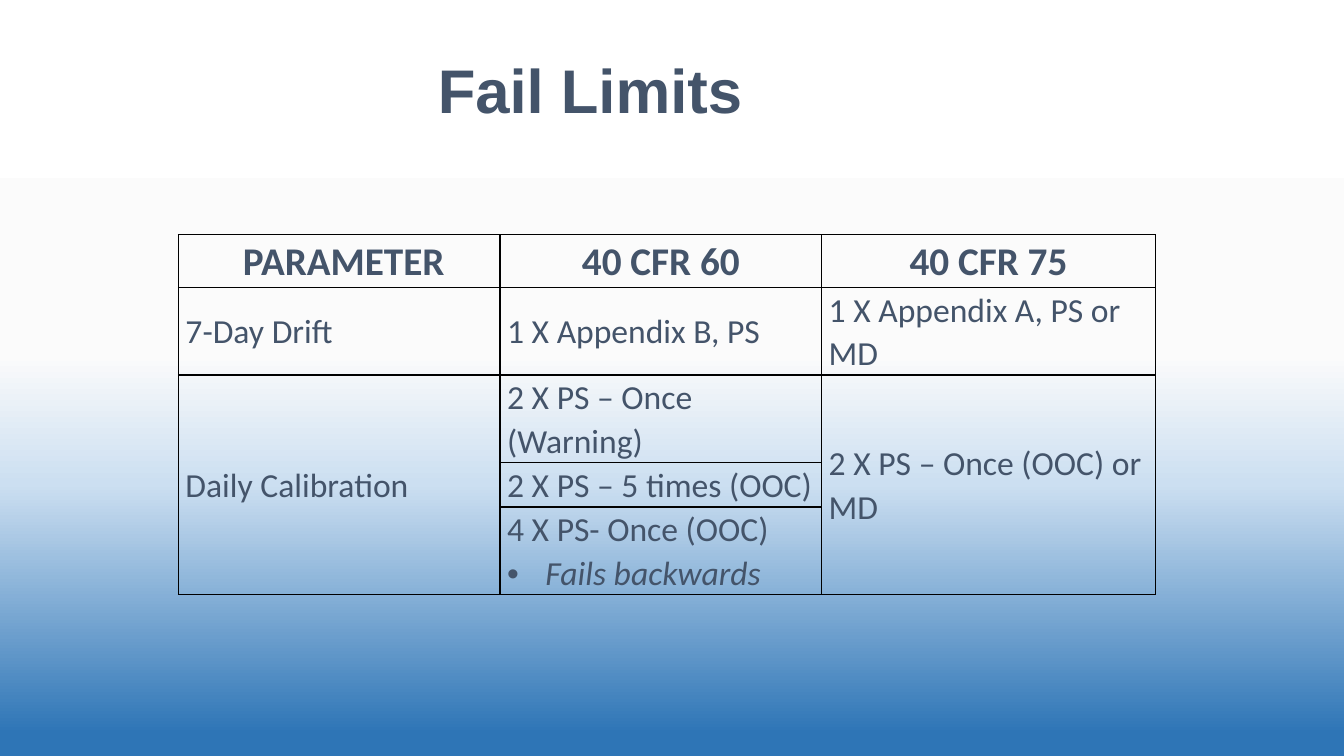
"""Builds the Fail Limits slide with its comparison table."""
from dataclasses import dataclass

from lxml.etree import SubElement
from pptx import Presentation
from pptx.dml.color import RGBColor
from pptx.enum.text import MSO_ANCHOR, PP_ALIGN
from pptx.oxml import parse_xml
from pptx.oxml.ns import nsdecls, qn
from pptx.util import Inches, Pt


@dataclass(frozen=True)
class Theme:
    ink: str = "44546A"
    rule: str = "000000"
    backdrop: tuple = ((0, "FFFFFF"), (47, "FBFBFB"), (64, "CCDFF1"), (97, "2E75B6"))
    title_font: str = "Arial"
    body_font: str = "Calibri"
    title_size: int = 44
    header_size: int = 28
    body_size: int = 24


THEME = Theme()
HEADINGS = (" PARAMETER", "40 CFR 60", "40 CFR 75")
LIMITS = (
    ("7-Day Drift", "1 X Appendix B, PS", "1 X Appendix A, PS or MD"),
    ("Daily Calibration", "2 X PS – Once (Warning)", "2 X PS – Once (OOC) or MD"),
    (None, "2 X PS – 5 times (OOC)", None),
    (None, "4 X PS- Once (OOC)", None),
)
COLUMN_WIDTHS = (3.19, 3.19, 3.31)
ROW_HEIGHTS = (0.52, 0.87, 0.87, 0.44, 0.87)


def write(paragraph, text, font=THEME.body_font, size=THEME.body_size, bold=False,
          italic=False, align=PP_ALIGN.LEFT, spacing=1.07, bullet=None):
    if bullet:
        properties = paragraph._p.get_or_add_pPr()
        properties.set("marL", str(Inches(0.38)))
        properties.set("indent", str(-Inches(0.38)))
        SubElement(properties, qn("a:buFont")).set("typeface", "Arial")
        SubElement(properties, qn("a:buChar")).set("char", bullet)
    paragraph.alignment = align
    paragraph.line_spacing = spacing
    run = paragraph.add_run()
    run.text = text
    run.font.name = font
    run.font.size = Pt(size)
    run.font.bold = bold
    run.font.italic = italic
    run.font.color.rgb = RGBColor.from_string(THEME.ink)


class SlideBuilder:
    def __init__(self, deck, theme):
        self.theme = theme
        self.slide = deck.slides.add_slide(deck.slide_layouts[5])

    def backdrop(self):
        fill = self.slide.background.fill
        fill.gradient()
        fill.gradient_angle = 270
        stops = fill.gradient_stops._gsLst
        for stop in list(stops):
            stops.remove(stop)
        for position, color in self.theme.backdrop:
            stop = SubElement(stops, qn("a:gs"), pos=str(position * 1000))
            SubElement(stop, qn("a:srgbClr"), val=color)

    def title(self, text):
        heading = self.slide.shapes.title
        heading.left, heading.top = Inches(0.71), Inches(0.5)
        heading.width, heading.height = Inches(10.29), Inches(0.86)
        heading.text_frame.vertical_anchor = MSO_ANCHOR.MIDDLE
        write(heading.text_frame.paragraphs[0], text, font=self.theme.title_font,
              size=self.theme.title_size, bold=True, align=PP_ALIGN.CENTER, spacing=0.9)

    def style_cell(self, cell):
        cell.margin_left = cell.margin_right = Inches(0.07)
        cell.margin_top = cell.margin_bottom = 0
        cell.fill.background()
        properties = cell._tc.get_or_add_tcPr()
        for index, side in enumerate("LRTB"):
            properties.insert(index, parse_xml(
                f'<a:ln{side} {nsdecls("a")} w="{Pt(1)}"><a:solidFill>'
                f'<a:srgbClr val="{self.theme.rule}"/></a:solidFill></a:ln{side}>'))

    def table(self, headings, rows):
        limits = self.slide.shapes.add_table(
            len(rows) + 1, len(headings), Inches(1.77), Inches(2.33),
            Inches(sum(COLUMN_WIDTHS)), Inches(sum(ROW_HEIGHTS))).table
        limits.first_row = limits.horz_banding = False
        for column, width in zip(limits.columns, COLUMN_WIDTHS):
            column.width = Inches(width)
        for row, height in zip(limits.rows, ROW_HEIGHTS):
            row.height = Inches(height)
        for row_index, texts in enumerate((headings, *rows)):
            for column_index, text in enumerate(texts):
                cell = limits.cell(row_index, column_index)
                self.style_cell(cell)
                if text is None:
                    continue
                paragraph = cell.text_frame.paragraphs[0]
                if row_index == 0:
                    write(paragraph, text, size=self.theme.header_size, bold=True,
                          align=PP_ALIGN.CENTER)
                else:
                    cell.vertical_anchor = MSO_ANCHOR.MIDDLE
                    write(paragraph, text)
        for column_index in (0, 2):
            limits.cell(2, column_index).merge(limits.cell(4, column_index))
        write(limits.cell(4, 1).text_frame.add_paragraph(), "Fails backwards",
              italic=True, bullet="•")


def main():
    deck = Presentation()
    deck.slide_width, deck.slide_height = Inches(13.33), Inches(7.5)
    builder = SlideBuilder(deck, THEME)
    builder.backdrop()
    builder.title("Fail Limits")
    builder.table(HEADINGS, LIMITS)
    deck.save("out.pptx")


if __name__ == "__main__":
    main()
